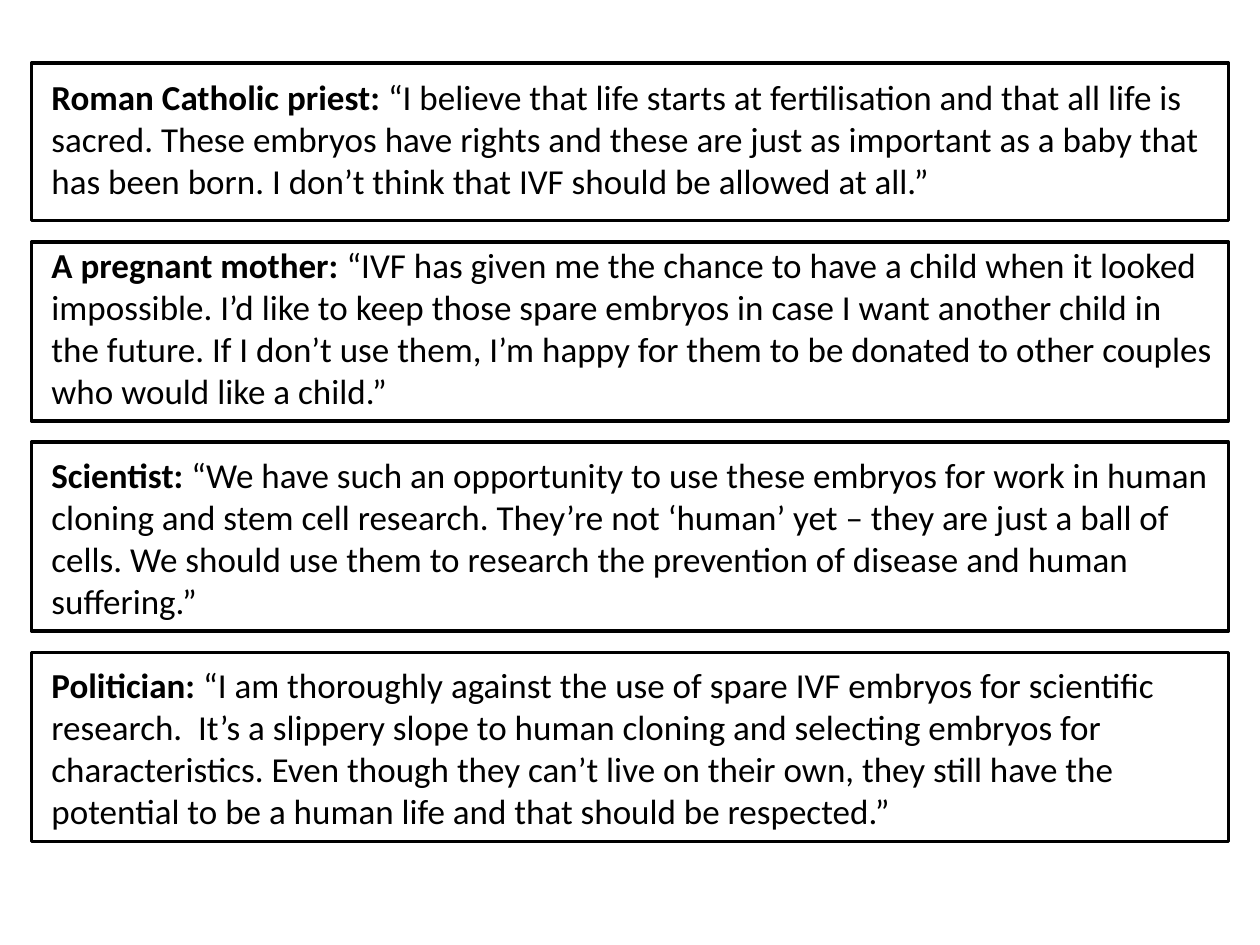
from pptx import Presentation
from pptx.dml.color import RGBColor
from pptx.enum.shapes import MSO_SHAPE
from pptx.enum.text import MSO_AUTO_SIZE
from pptx.util import Inches, Pt

OPINIONS = [
    ("Roman Catholic priest:",
     "“I believe that life starts at fertilisation and that all life is sacred. "
     "These embryos have rights and these are just as important as a baby that "
     "has been born. I don’t think that IVF should be allowed at all.”"),
    ("A pregnant mother:",
     "“IVF has given me the chance to have a child when it looked impossible. "
     "I’d like to keep those spare embryos in case I want another child in the "
     "future. If I don’t use them, I’m happy for them to be donated to other "
     "couples who would like a child.”"),
    ("Scientist:",
     "“We have such an opportunity to use these embryos for work in human cloning "
     "and stem cell research. They’re not ‘human’ yet – they are just a ball of "
     "cells. We should use them to research the prevention of disease and human "
     "suffering.”"),
    ("Politician:",
     "“I am thoroughly against the use of spare IVF embryos for scientific "
     "research.  It’s a slippery slope to human cloning and selecting embryos for "
     "characteristics. Even though they can’t live on their own, they still have "
     "the potential to be a human life and that should be respected.”"),
]
FRAME_HEIGHTS = [1.25, 1.42, 1.5, 1.5]
FRAME_LEFT, FRAME_TOP, FRAME_WIDTH, FRAME_GAP = 0.25, 0.5, 9.5, 0.17
BLACK = "000000"


def color(hex_value):
    return RGBColor.from_string(hex_value)


def add_opinions(slide):
    """Put all opinions in one text box, one paragraph each."""
    text_box = slide.shapes.add_textbox(
        Inches(0.31), Inches(0.55), Inches(9.45), Inches(6.16))
    text_frame = text_box.text_frame
    text_frame.word_wrap = True
    text_frame.auto_size = MSO_AUTO_SIZE.SHAPE_TO_FIT_TEXT
    text_frame.text = "\n".join(speaker for speaker, _ in OPINIONS)
    for paragraph, (_, quote) in zip(text_frame.paragraphs, OPINIONS):
        paragraph.add_run().text = f" {quote}"
        paragraph.space_after = Pt(24)
        for run, bold in zip(paragraph.runs, (True, False)):
            run.font.name = "Calibri"
            run.font.size = Pt(20)
            run.font.bold = bold
            run.font.color.rgb = color(BLACK)
    text_frame.paragraphs[-1].space_after = Pt(0)


def add_frames(slide):
    top = FRAME_TOP
    for height in FRAME_HEIGHTS:
        frame = slide.shapes.add_shape(
            MSO_SHAPE.RECTANGLE, Inches(FRAME_LEFT), Inches(top),
            Inches(FRAME_WIDTH), Inches(height))
        frame.shadow.inherit = False
        frame.fill.background()
        frame.line.color.rgb = color(BLACK)
        frame.line.width = Pt(2)
        top += height + FRAME_GAP


def main():
    presentation = Presentation()
    presentation.slide_width = Inches(10)
    presentation.slide_height = Inches(7.5)
    slide = presentation.slides.add_slide(presentation.slide_layouts[6])
    add_opinions(slide)
    add_frames(slide)
    presentation.save("out.pptx")


if __name__ == "__main__":
    main()
